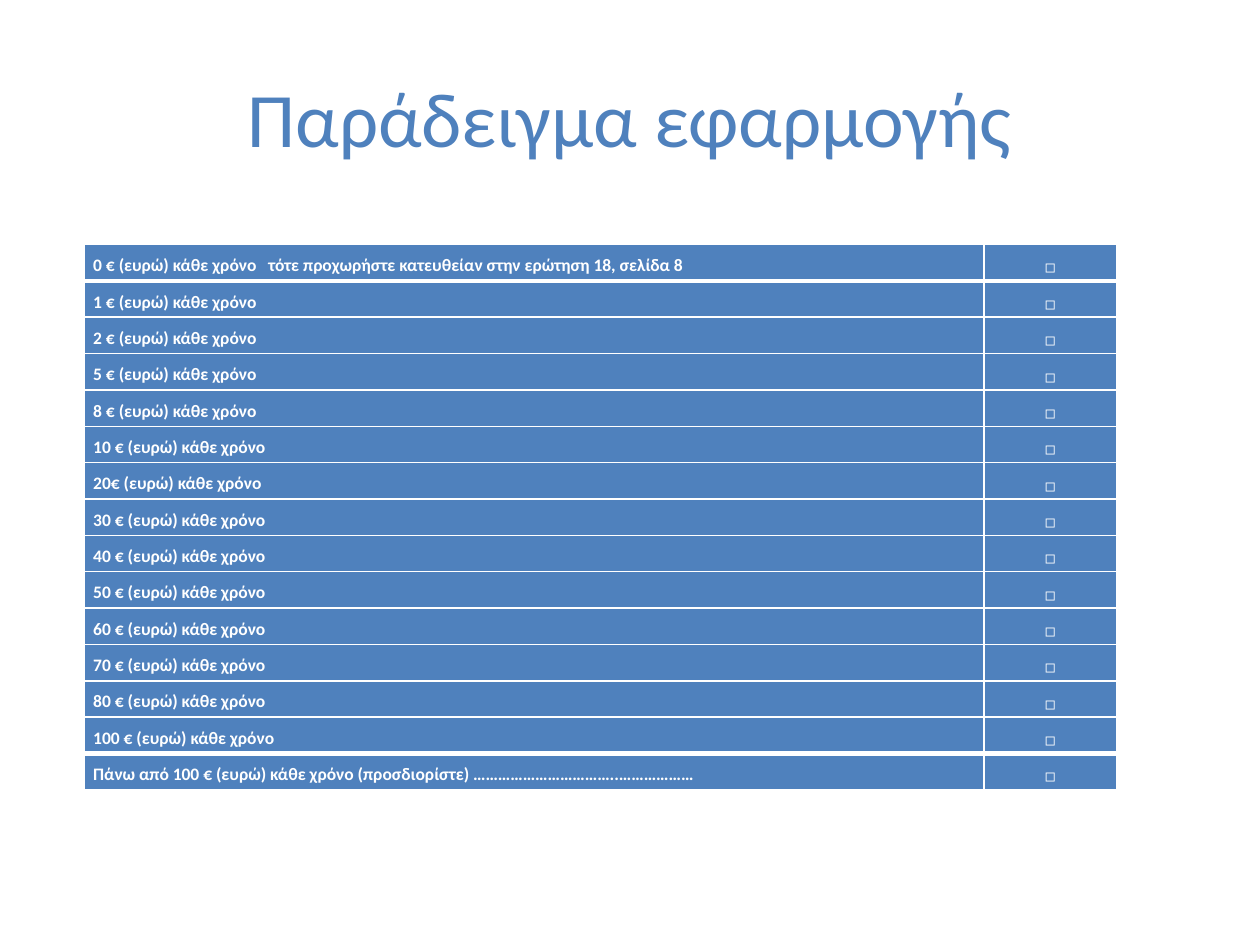
from typing import NamedTuple

from lxml import etree
from pptx import Presentation
from pptx.dml.color import RGBColor
from pptx.enum.text import MSO_ANCHOR, PP_ALIGN
from pptx.oxml.ns import qn
from pptx.util import Emu, Inches, Pt

BLUE = RGBColor(0x4F, 0x81, 0xBD)
WHITE = RGBColor(0xFF, 0xFF, 0xFF)
FONT = "Calibri"
TOP, MIDDLE = MSO_ANCHOR.TOP, MSO_ANCHOR.MIDDLE
LEFT, CENTER, JUSTIFY = PP_ALIGN.LEFT, PP_ALIGN.CENTER, PP_ALIGN.JUSTIFY
THIN, THICK = Pt(1), Pt(3)
COLS = (Inches(7.14), Inches(1.05))
HEIGHT = Inches(4.33)
BOX = "◻"
EACH = "€ (ευρώ) κάθε χρόνο"


class Choice(NamedTuple):
    text: str
    align: PP_ALIGN = LEFT
    top: int = THIN
    bottom: int = THIN


CHOICES = [
    Choice(f"0 {EACH}   τότε προχωρήστε κατευθείαν στην ερώτηση 18, σελίδα 8",
           align=JUSTIFY, bottom=THICK),
    Choice(f"1 {EACH}", top=THICK),
    *(Choice(f"{sum_} {EACH}") for sum_ in (2, 5, 8, 10)),
    Choice(f"20{EACH}"),
    *(Choice(f"{sum_} {EACH}") for sum_ in range(30, 90, 10)),
    Choice(f"100 {EACH}", bottom=THICK),
    Choice(f"Πάνω από 100 {EACH} (προσδιορίστε) ……………………………..………………",
           top=THICK),
]


def add_run(para, text: str, size: int, color: RGBColor, bold: bool) -> None:
    run = para.add_run()
    run.text = text
    font = run.font
    font.name, font.size, font.bold = FONT, Pt(size), bold
    font.color.rgb = color


def add_edge(cell, side: str, width: int) -> None:
    line = etree.SubElement(cell._tc.get_or_add_tcPr(), qn(f"a:ln{side}"),
                            w=str(width))
    fill = etree.SubElement(line, qn("a:solidFill"))
    etree.SubElement(fill, qn("a:srgbClr"), val=str(WHITE))


def fill_cell(cell, text: str, align: PP_ALIGN, anchor: MSO_ANCHOR,
              top: int, bottom: int) -> None:
    cell.margin_left = cell.margin_right = Inches(0.07)
    cell.margin_top = cell.margin_bottom = 0
    cell.vertical_anchor = anchor
    # The schema wants the edges in this order, ahead of the fill.
    for side, width in (("L", THIN), ("R", THIN), ("T", top), ("B", bottom)):
        add_edge(cell, side, width)
    cell.fill.solid()
    cell.fill.fore_color.rgb = BLUE
    para = cell.text_frame.paragraphs[0]
    para.alignment, para.line_spacing = align, 1.5
    add_run(para, text, 10, WHITE, True)


def add_title(slide, text: str) -> None:
    title = slide.shapes.title
    title.left, title.top = Inches(0.5), Inches(0.3)
    title.width, title.height = Inches(9), Inches(1.25)
    title.text_frame.vertical_anchor = MIDDLE
    para = title.text_frame.paragraphs[0]
    para.alignment = CENTER
    add_run(para, text, 44, BLUE, False)


def add_choices(slide, choices: list[Choice]) -> None:
    table = slide.shapes.add_table(len(choices), len(COLS), Inches(0.67),
                                   Inches(1.94), sum(COLS), HEIGHT).table
    for col, width in zip(table.columns, COLS):
        col.width = width
    for row, choice in zip(table.rows, choices):
        row.height = Emu(HEIGHT // len(choices))
        label, box = row.cells
        fill_cell(label, choice.text, choice.align, TOP,
                  choice.top, choice.bottom)
        fill_cell(box, BOX, CENTER, MIDDLE, choice.top, choice.bottom)


def main() -> None:
    deck = Presentation()
    deck.slide_width, deck.slide_height = Inches(10), Inches(7.5)
    slide = deck.slides.add_slide(deck.slide_layouts.get_by_name("Title Only"))
    add_title(slide, "Παράδειγμα εφαρμογής")
    add_choices(slide, CHOICES)
    deck.save("out.pptx")


if __name__ == "__main__":
    main()
